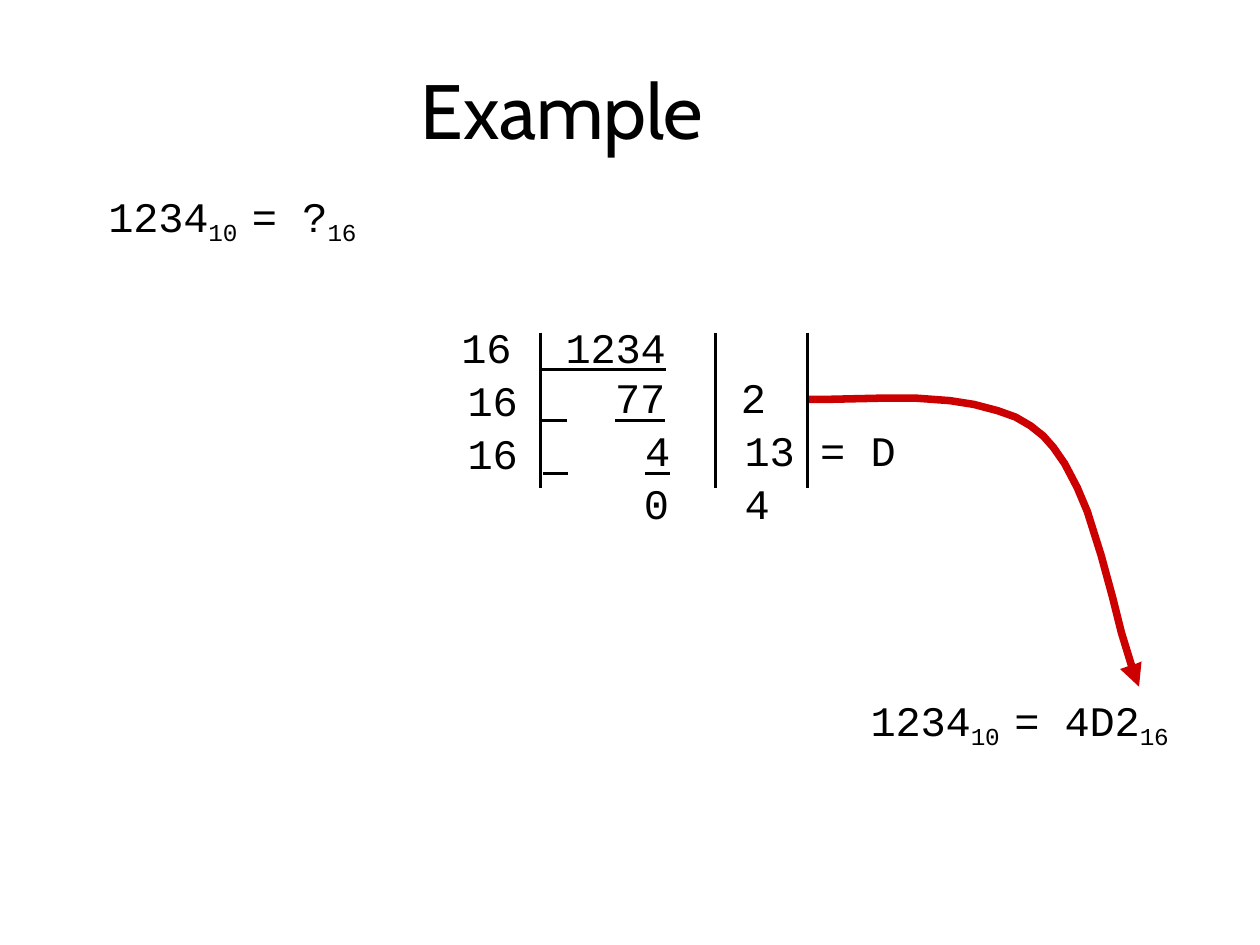
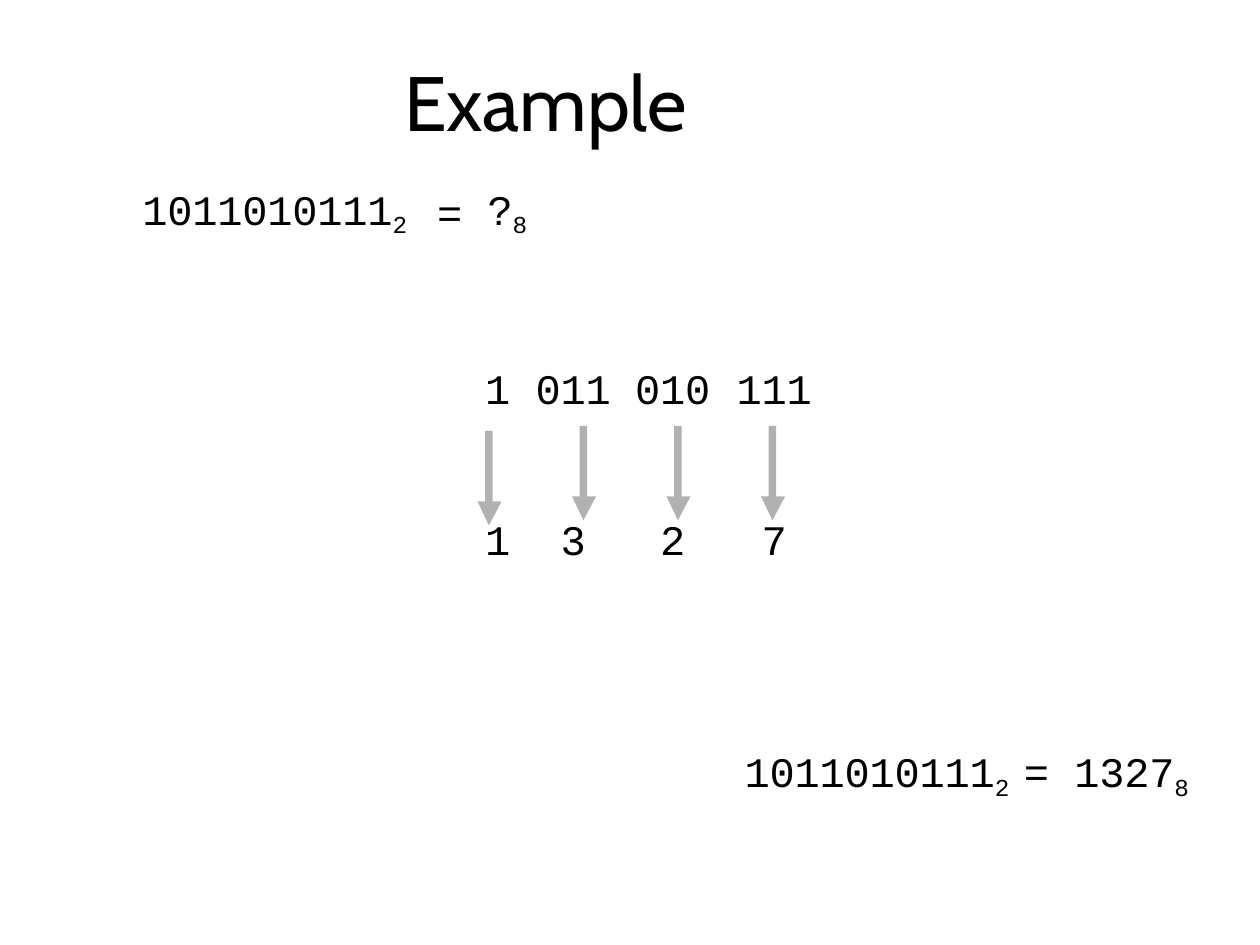
"""Build two worked examples of converting numbers between bases."""
from dataclasses import dataclass
from math import hypot
from typing import Optional

from lxml.etree import SubElement
from pptx import Presentation
from pptx.dml.color import RGBColor
from pptx.enum.text import MSO_ANCHOR, PP_ALIGN
from pptx.oxml import parse_xml
from pptx.oxml.ns import nsdecls, qn
from pptx.util import Inches, Pt

BLACK = RGBColor(0x00, 0x00, 0x00)
RED = RGBColor(0xCC, 0x00, 0x00)
GREY = RGBColor(0xB1, 0xB1, 0xB1)
TITLE_FONT, CODE_FONT = "Cabin", "Courier New"
PLAIN_TABLE = "{2D5ABB26-0587-4C30-8999-92F81FD0307C}"
Point = tuple[float, float]


@dataclass
class Run:
    text: str
    spacing: int = -10
    sub: bool = False
    underline: bool = False


@dataclass
class Cell:
    row: int
    col: int
    runs: list[Run]
    align: PP_ALIGN = PP_ALIGN.LEFT
    left: float = 0
    right: float = 0
    top: float = 0
    leading: Optional[float] = None
    tab: Optional[float] = None


def add_run(p, run: Run, *, size: float = 24, font: str = CODE_FONT) -> None:
    r = p.add_run()
    r.text = run.text
    r.font.size, r.font.name = Pt(size), font
    r.font.color.rgb = BLACK
    rPr = r._r.get_or_add_rPr()
    rPr.set("spc", str(run.spacing))
    if run.sub:
        rPr.set("baseline", "-21000")
    if run.underline:
        r.font.underline = True


def fill_text(sp, runs: list[Run], *, indent: float, size: float = 24,
              font: str = CODE_FONT) -> None:
    tf = sp.text_frame
    tf.word_wrap = True
    tf.vertical_anchor = MSO_ANCHOR.TOP
    tf.margin_left = tf.margin_right = tf.margin_bottom = 0
    tf.margin_top = Inches(0.01)
    p = tf.paragraphs[0]
    p.alignment = PP_ALIGN.LEFT
    p.space_before = Pt(1)
    p._p.get_or_add_pPr().set("marL", str(Inches(indent)))
    for run in runs:
        add_run(p, run, size=size, font=font)


def add_example_slide(prs, left: float, top: float, width: float):
    s = prs.slides.add_slide(prs.slide_layouts[5])
    title = s.shapes.title
    title.left, title.top = Inches(left), Inches(top)
    title.width, title.height = Inches(width), Inches(0.76)
    fill_text(title, [Run("Example")], indent=0.01, size=44, font=TITLE_FONT)
    return s


def add_equation(s, left: float, top: float, width: float,
                 number: str, base: str, result: str, result_base: str) -> None:
    sp = s.shapes.add_textbox(Inches(left), Inches(top), Inches(width), Inches(0.43))
    runs = [Run(number), Run(f"{base} ", sub=True), Run("= ", 0),
            Run(result), Run(result_base, sub=True)]
    fill_text(sp, runs, indent=0.06)


def add_outline(s, points: list[Point], color: RGBColor) -> None:
    start, *rest = [(Inches(x), Inches(y)) for x, y in points]
    builder = s.shapes.build_freeform(*start)
    builder.add_line_segments(rest, close=True)
    sp = builder.convert_to_shape()
    sp.fill.solid()
    sp.fill.fore_color.rgb = color
    sp.line.fill.background()
    sp.shadow.inherit = False


def add_down_arrow(s, left: float, top: float) -> None:
    outline = [(0.06, 0), (0.12, 0), (0.12, 0.56), (0.19, 0.56),
               (0.09, 0.75), (0, 0.56), (0.06, 0.56)]
    add_outline(s, [(left + x, top + y) for x, y in outline], GREY)


def add_curved_arrow(s, centre: list[Point], head: list[Point], half: float) -> None:
    outer, inner = [], []
    for i, (x, y) in enumerate(centre):
        x0, y0 = centre[max(i - 1, 0)]
        x1, y1 = centre[min(i + 1, len(centre) - 1)]
        length = hypot(x1 - x0, y1 - y0)
        dx, dy = half * (y1 - y0) / length, half * (x1 - x0) / length
        outer.append((x + dx, y - dy))
        inner.append((x - dx, y + dy))
    add_outline(s, outer + head + inner[::-1], RED)


def add_grid(s, left: float, top: float, cols: list[float], rows: list[float],
             cells: list[Cell]):
    frame = s.shapes.add_table(len(rows), len(cols), Inches(left), Inches(top),
                               Inches(sum(cols)), Inches(sum(rows)))
    table = frame.table
    table.first_row = table.horz_banding = False
    table._tbl.tblPr.find(qn("a:tableStyleId")).text = PLAIN_TABLE
    for column, width in zip(table.columns, cols):
        column.width = Inches(width)
    for row, height in zip(table.rows, rows):
        row.height = Inches(height)
    for tc in table.iter_cells():
        tc.fill.background()
        tc.margin_left = tc.margin_right = tc.margin_top = tc.margin_bottom = 0
    for cell in cells:
        fill_cell(table.cell(cell.row, cell.col), cell)
    return table


def fill_cell(tc, cell: Cell) -> None:
    tc.margin_left, tc.margin_right = Inches(cell.left), Inches(cell.right)
    tc.margin_top = Inches(cell.top)
    p = tc.text_frame.paragraphs[0]
    p.alignment = cell.align
    if cell.leading:
        p.line_spacing = Pt(cell.leading)
    if cell.tab:
        tabs = SubElement(p._p.get_or_add_pPr(), qn("a:tabLst"))
        SubElement(tabs, qn("a:tab"), pos=str(Inches(cell.tab)), algn="l")
    for run in cell.runs:
        add_run(p, run)


def add_rule(table, row: int, col: int, width: float) -> None:
    for tag, tc in (("lnR", table.cell(row, col)), ("lnL", table.cell(row, col + 1))):
        line = parse_xml(
            f'<a:{tag} {nsdecls("a")} w="{Pt(width)}"><a:solidFill>'
            f'<a:srgbClr val="{BLACK}"/></a:solidFill></a:{tag}>')
        tc._tc.get_or_add_tcPr().insert(0, line)


def build_division_slide(prs) -> None:
    s = add_example_slide(prs, 3.33, 0.49, 2.99)
    add_equation(s, 0.8, 1.5, 2.24, "1234", "10", "?", "16")
    add_equation(s, 6.85, 5.5, 2.64, "1234", "10", "4D2", "16")
    centre = [(6.41, 3.17), (6.56, 3.17), (7, 3.16), (7.27, 3.16), (7.54, 3.18),
              (7.73, 3.21), (7.92, 3.26), (8.06, 3.31), (8.18, 3.38), (8.28, 3.46),
              (8.36, 3.55), (8.45, 3.68), (8.55, 3.87), (8.63, 4.06), (8.74, 4.41),
              (8.83, 4.74), (8.9, 5.02), (8.98, 5.28)]
    add_curved_arrow(s, centre, [(9.06, 5.25), (9.04, 5.45), (8.89, 5.31)], 0.03)

    right = PP_ALIGN.RIGHT
    cells = [
        Cell(0, 1, [Run("16")], right, right=0.23, leading=24.8),
        Cell(0, 2, [Run(" ", -290, underline=True), Run("1234", underline=True)],
             leading=24.8),
        Cell(1, 1, [Run("16")], right, right=0.18, leading=27.3),
        Cell(1, 2, [Run(" \t", 0, underline=True), Run("77", underline=True)],
             right, right=0.4, leading=25.6, tab=0.58),
        Cell(1, 3, [Run("2", 0)], left=0.2, leading=25.6),
        Cell(2, 1, [Run("16")], right, right=0.18, leading=27),
        Cell(2, 2, [Run(" \t4", 0, underline=True)], right, right=0.36,
             leading=25.6, tab=0.81),
        Cell(2, 3, [Run("13")], left=0.23, leading=25.6),
        Cell(2, 4, [Run("=", 0)], left=0.1, leading=25.6),
        Cell(2, 5, [Run("D", 0)], left=0.1, leading=25.6),
        Cell(3, 2, [Run("0", 0)], right, right=0.37, leading=25.6),
        Cell(3, 3, [Run("4", 0)], left=0.23, leading=25.6),
    ]
    table = add_grid(s, 2.48, 2.64, [0.85, 0.96, 1.39, 0.73, 0.4, 0.33],
                     [0.39, 0.42, 0.42, 0.39], cells)
    table.cell(0, 0).merge(table.cell(2, 0))
    table.cell(0, 4).merge(table.cell(1, 5))
    for row, width in enumerate([1.5, 2.25, 2.25]):
        for col in (2, 1):
            add_rule(table, row, col, width)


def build_grouping_slide(prs) -> None:
    s = add_example_slide(prs, 3.2, 0.42, 2.82)
    cells = [
        Cell(0, 0, [Run("1011010111"), Run("2", sub=True)], left=0.03, leading=24.8),
        Cell(0, 1, [Run("=", 0)], left=0.1, leading=24.8),
        Cell(0, 2, [Run("?"), Run("8", sub=True)], left=0.11, leading=24.8),
    ]
    digit_rows = [(1, 0.44, ["1", "011", "010", "111"]), (2, 0.36, ["1", "3", "2", "7"])]
    insets = [(0.09, 0), (0, 0.08), (0, 0.02), (0.06, 0)]
    for row, top, digits in digit_rows:
        for i, (text, (left, right)) in enumerate(zip(digits, insets)):
            align = PP_ALIGN.CENTER if i else PP_ALIGN.LEFT
            cells.append(Cell(row, i + 2, [Run(text)], align, left, right, top))
    table = add_grid(s, 1.1, 1.57, [2.27, 0.39, 0.47, 0.72, 0.8, 0.73],
                     [0.92, 1.28, 0.79], cells)
    table.cell(0, 3).merge(table.cell(0, 5))
    for i in range(4):
        add_down_arrow(s, 3.79 + 0.75 * i, 3.38 if i else 3.42)
    add_equation(s, 5.85, 5.91, 3.77, "1011010111", "2", "1327", "8")


def main() -> None:
    prs = Presentation()
    prs.slide_width, prs.slide_height = Inches(10), Inches(7.5)
    build_division_slide(prs)
    build_grouping_slide(prs)
    prs.save("out.pptx")


if __name__ == "__main__":
    main()
